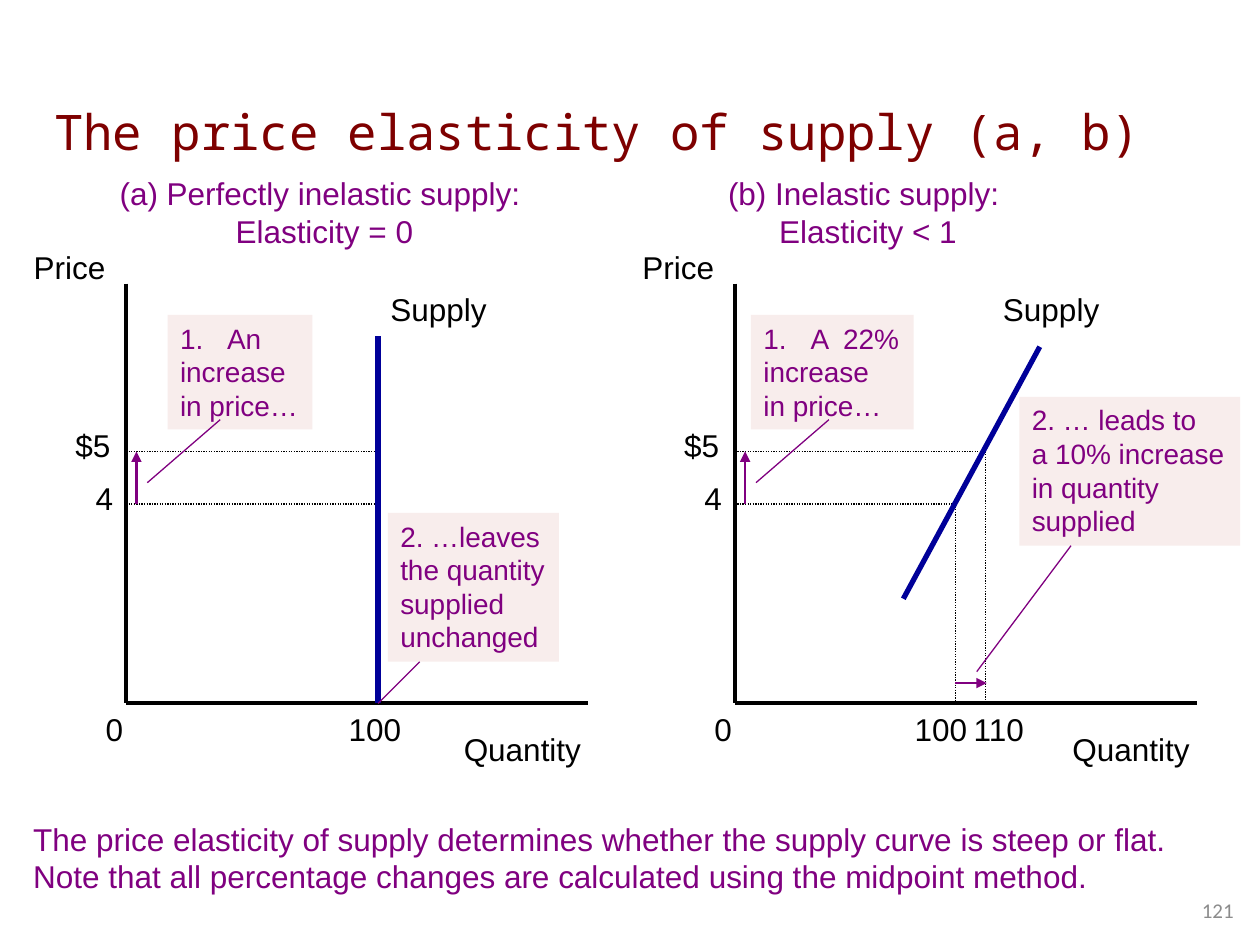
"""Build the slide comparing perfectly inelastic and inelastic supply."""
from pptx import Presentation
from pptx.dml.color import RGBColor
from pptx.enum.dml import MSO_LINE_DASH_STYLE as Dash
from pptx.enum.shapes import MSO_CONNECTOR as Connector
from pptx.enum.text import MSO_ANCHOR as Anchor, MSO_AUTO_SIZE as AutoSize, PP_ALIGN as Align
from pptx.oxml.ns import qn
from pptx.util import Cm, Pt
from lxml.etree import SubElement

COLORS = {"title": "7E0000", "accent": "800080", "supply": "000099",
          "ink": "000000", "callout": "F8EDEC", "number": "8C8C8C"}
TITLE = "The price elasticity of supply (a, b)"
NOTE = ["The price elasticity of supply determines whether the supply curve is steep or flat.",
        "Note that all percentage changes are calculated using the midpoint method."]
PAGE_NUMBER = "121"

AXIS_TOP, AXIS_BOTTOM, AXIS_WIDTH = 5.72, 14.18, 9.31
PRICE_HIGH, PRICE_LOW = 9.1, 10.16
LABEL_HEIGHT = 1.02
INDENT = 0.95
SHARED_LABELS = [
    ("Price", -2.11, 4.88, 2.16),
    ("Quantity", 6.56, 14.6, 3.07),
    ("0", -0.66, AXIS_BOTTOM, 0.86),
    ("$5", -1.27, 8.46, 1.22),
    ("4", -0.86, 9.53, 0.86),
]
PANELS = [
    {
        "left": 2.54,
        "heading": (["Perfectly inelastic supply: ", "Elasticity = 0"], 8.84, "alphaLcParenBoth"),
        "labels": [("Supply", 5.08, 5.72, 2.64), ("100", 4.24, AXIS_BOTTOM, 1.57)],
        "curve": (5.08, AXIS_BOTTOM, 5.08, 6.78),
        "guides": [(0, PRICE_HIGH, 5.08, PRICE_HIGH), (0, PRICE_LOW, 5.08, PRICE_LOW)],
        "arrows": [],
        "callouts": [
            (["An", "increase", "in price…"], 0.84, 6.35, 2.92, 2.31, "arabicPeriod"),
            (["2. …leaves", "the quantity", "supplied", "unchanged"], 5.28, 10.34, 3.45, 3, None),
        ],
        "leader": (5.08, AXIS_BOTTOM, 5.92, 13.34),
    },
    {
        "left": 14.81,
        "heading": (["(b) Inelastic supply: ", "Elasticity < 1"], 6.22, None),
        "labels": [("Supply", 5.16, 5.72, 2.64), ("100", 3.38, AXIS_BOTTOM, 1.57),
                   ("110", 4.57, AXIS_BOTTOM, 1.52)],
        "curve": (3.4, 12.07, 6.15, 6.99),
        "guides": [(0, PRICE_HIGH, 5.05, PRICE_HIGH), (0, PRICE_LOW, 4.45, PRICE_LOW),
                   (4.45, PRICE_LOW, 4.45, AXIS_BOTTOM), (5.05, PRICE_HIGH, 5.05, AXIS_BOTTOM)],
        "arrows": [(4.45, 13.77, 5.08, 13.77)],
        "callouts": [
            (["A  22%", "increase", "in price…"], 0.33, 6.35, 3.28, 2.31, "arabicPeriod"),
            (["2. … leads to", "a 10% increase", "in quantity", "supplied"], 5.74, 8, 4.45, 3, None),
        ],
        "leader": (4.88, 13.54, 6.78, 11),
    },
]


def color(name):
    """Return the named palette colour."""
    return RGBColor.from_string(COLORS[name])


def format_text(shape, size, name, font="Arial", align=Align.LEFT):
    """Give every paragraph of a shape one font, colour and alignment."""
    for paragraph in shape.text_frame.paragraphs:
        paragraph.alignment = align
        for run in paragraph.runs:
            run.font.size, run.font.name = Pt(size), font
            run.font.color.rgb = color(name)


def add_text(slide, lines, left, top, width, height, size=18, name="ink", **style):
    """Add an unwrapped text box with one paragraph for each line."""
    shape = slide.shapes.add_textbox(Cm(left), Cm(top), Cm(width), Cm(height))
    shape.text_frame.word_wrap = False
    shape.text_frame.text = "\n".join(lines)
    format_text(shape, size, name, **style)
    return shape


def number_first(shape, scheme):
    """Number the first paragraph automatically with a hanging indent."""
    if scheme:
        properties = shape.text_frame.paragraphs[0]._p.get_or_add_pPr()
        properties.set("marL", str(Cm(INDENT)))
        properties.set("indent", str(-Cm(INDENT)))
        SubElement(properties, qn("a:buFont"), typeface="+mj-lt")
        SubElement(properties, qn("a:buAutoNum"), type=scheme)


def add_line(slide, left, points, name, width, dash=None, arrow=False):
    """Add a straight line given relative to a panel's price axis."""
    x1, y1, x2, y2 = points
    line = slide.shapes.add_connector(
        Connector.STRAIGHT, Cm(left + x1), Cm(y1), Cm(left + x2), Cm(y2))
    line.line.color.rgb = color(name)
    line.line.width = Pt(width)
    if dash:
        line.line.dash_style = dash
    if arrow:
        SubElement(line.line._get_or_add_ln(), qn("a:tailEnd"), type="triangle")
    SubElement(line._element.spPr, qn("a:effectLst"))


def add_panel(slide, panel):
    """Draw one supply diagram with its labels and callouts."""
    left = panel["left"]
    lines, width, scheme = panel["heading"]
    heading = add_text(slide, lines, left - 0.42, 3.38, width, 1.8,
                       name="accent", align=Align.CENTER)
    number_first(heading, scheme)

    for axis in [(0, AXIS_TOP, 0, AXIS_BOTTOM), (0, AXIS_BOTTOM, AXIS_WIDTH, AXIS_BOTTOM)]:
        add_line(slide, left, axis, "ink", 2.25)
    for guide in panel["guides"]:
        add_line(slide, left, guide, "ink", 0.75, Dash.ROUND_DOT)
    add_line(slide, left, panel["curve"], "supply", 3)
    for text, x, top, width in SHARED_LABELS + panel["labels"]:
        add_text(slide, [text], left + x, top, width, LABEL_HEIGHT)

    for arrow in [(0.21, PRICE_LOW, 0.21, PRICE_HIGH)] + panel["arrows"]:
        add_line(slide, left, arrow, "accent", 1.5, arrow=True)
    for lines, x, top, width, height, scheme in panel["callouts"]:
        callout = add_text(slide, lines, left + x, top, width, height, 16, "accent")
        callout.fill.solid()
        callout.fill.fore_color.rgb = color("callout")
        number_first(callout, scheme)
    for leader in [(0.43, 9.73, 1.9, 8.46), panel["leader"]]:
        add_line(slide, left, leader, "accent", 0.75)


def main():
    """Create the presentation and save it."""
    presentation = Presentation()
    presentation.slide_width, presentation.slide_height = Cm(25.4), Cm(19.05)
    slide = presentation.slides.add_slide(presentation.slide_layouts[5])

    title = slide.shapes.title
    title.left, title.top, title.width, title.height = Cm(0.84), Cm(1.9), Cm(24.56), Cm(1.48)
    title.text_frame.text = TITLE
    title.text_frame.auto_size = AutoSize.NONE
    title.text_frame.vertical_anchor = Anchor.MIDDLE
    format_text(title, 28, "title", "Noto Sans Mono")

    for panel in PANELS:
        add_panel(slide, panel)
    add_text(slide, NOTE, 0.42, 16.4, 23.57, 1.8, name="accent")
    number = add_text(slide, [PAGE_NUMBER], 23.7, 17.83, 1.7, 1.02, 12, "number",
                      font="Calibri", align=Align.CENTER)
    number.text_frame.vertical_anchor = Anchor.MIDDLE
    presentation.save("out.pptx")


if __name__ == "__main__":
    main()
